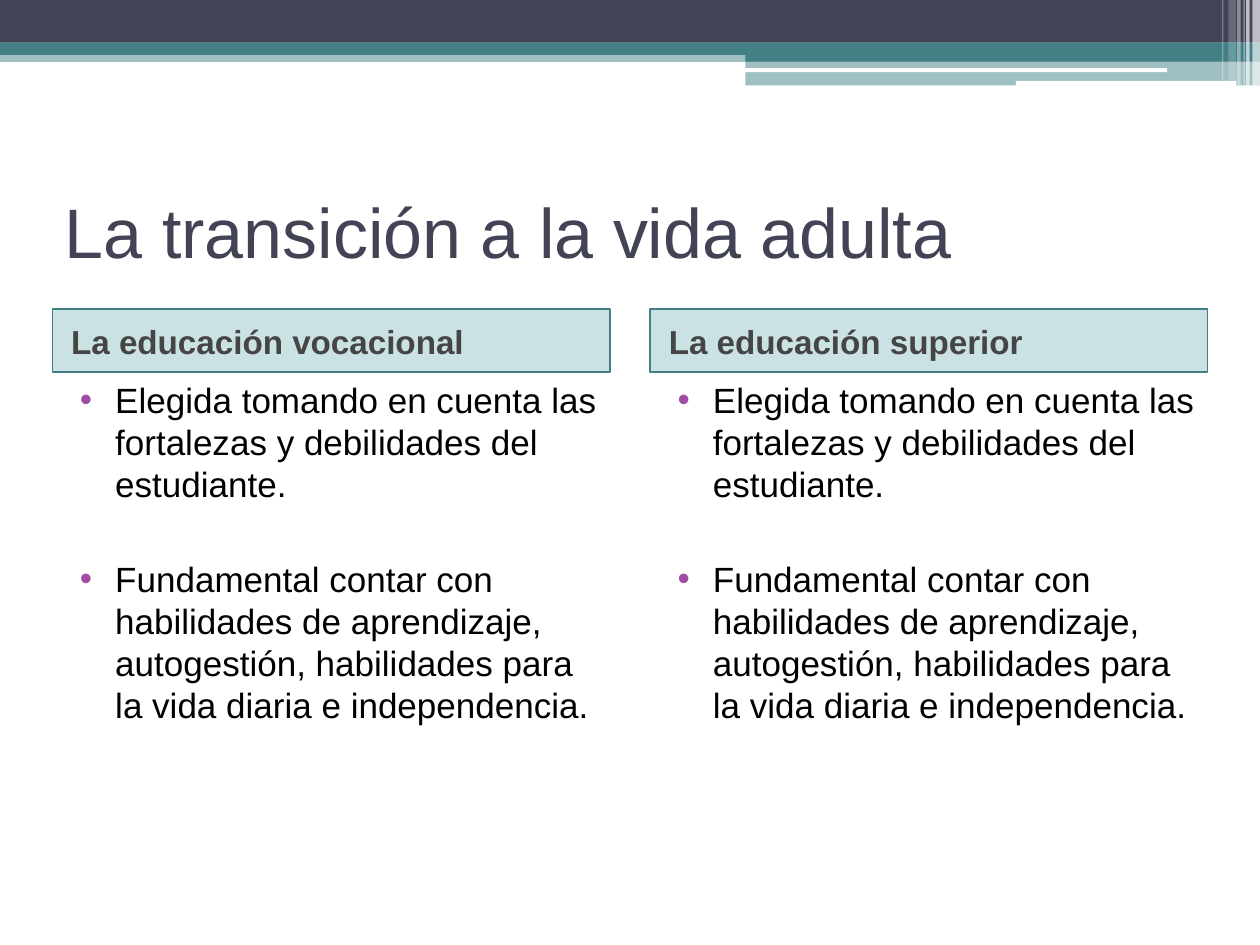
from lxml.etree import SubElement
from pptx import Presentation
from pptx.dml.color import RGBColor
from pptx.enum.shapes import MSO_SHAPE
from pptx.enum.text import MSO_ANCHOR, PP_ALIGN
from pptx.oxml.ns import qn
from pptx.util import Pt

NAVY, TEAL, WHITE = "424456", "438086", "FFFFFF"


def add_block(left, top, width, height, color, opacity=100, kind=MSO_SHAPE.RECTANGLE):
    """Add a filled shape without outline; opacity is in percent."""
    shape = slide.shapes.add_shape(kind, Pt(left), Pt(top), Pt(width), Pt(height))
    shape.shadow.inherit = False
    shape.line.fill.background()
    shape.fill.solid()
    shape.fill.fore_color.rgb = RGBColor.from_string(color)
    if opacity < 100:
        color_element = shape.fill._xPr.find(qn("a:solidFill"))[0]
        SubElement(color_element, qn("a:alpha"), val=str(opacity * 1000))
    return shape


def format_paragraph(paragraph, size, color, bold=False):
    paragraph.alignment = PP_ALIGN.LEFT
    for run in paragraph.runs:
        run.font.name = "Arial"
        run.font.size = Pt(size)
        run.font.bold = bold
        run.font.color.rgb = RGBColor.from_string(color)


presentation = Presentation()
presentation.slide_width, presentation.slide_height = Pt(720), Pt(540)
slide = presentation.slides.add_slide(presentation.slide_layouts[6])

# Header bands
for left, top, width, height, color, opacity in [
    (0, 28.8, 720, 6.6, TEAL, 50),
    (0, 0, 720, 24.4, NAVY, 100),
    (0, 24.2, 720, 7.2, TEAL, 100),
    (426, 28, 294, 7.2, TEAL, 100),
    (426, 35.2, 294, 13.6, TEAL, 50),
]:
    add_block(left, top, width, height, color, opacity)

for left, top, width, height in [(425.5, 39, 241.5, 2.2), (580.5, 46.2, 126, 2.8)]:
    strip = add_block(left, top, width, height, WHITE, kind=MSO_SHAPE.ROUNDED_RECTANGLE)
    strip.adjustments[0] = 0.17

# Translucent vertical stripes at the right edge
for left, width, height, opacity in [
    (715.7, 4.3, 49, 65),
    (712.1, 2, 49, 65),
    (710.6, 0.7, 49, 60),
    (707, 2, 49, 40),
    (702, 4.3, 46.1, 20),
    (698.4, 0.7, 46.1, 30),
]:
    add_block(left, 0, width, height, WHITE, opacity)

title = slide.shapes.add_textbox(Pt(30), Pt(90), Pt(660), Pt(84))
title.text_frame.word_wrap = True
title.text_frame.vertical_anchor = MSO_ANCHOR.MIDDLE
title.text_frame.text = "La transición a la vida adulta"
format_paragraph(title.text_frame.paragraphs[0], 40, NAVY)

# Two columns, each with a heading and the same bullets
bullets = [
    "Elegida tomando en cuenta las fortalezas y debilidades del estudiante.",
    "Fundamental contar con habilidades de aprendizaje, autogestión, "
    "habilidades para la vida diaria e independencia.",
]
column_width = 318.5
for left, heading_text in [
    (30, "La educación vocacional"),
    (371.5, "La educación superior"),
]:
    heading = add_block(left, 176.8, column_width, 36, "328E97", 25)
    heading.line.color.rgb = RGBColor.from_string(TEAL)
    heading.line.width = Pt(1)
    heading.text_frame.word_wrap = True
    heading.text_frame.vertical_anchor = MSO_ANCHOR.MIDDLE
    heading.text_frame.text = heading_text
    paragraph = heading.text_frame.paragraphs[0]
    paragraph.space_before = Pt(3)
    paragraph._p.get_or_add_pPr().set("marL", str(Pt(3.6)))
    format_paragraph(paragraph, 19, "454545", bold=True)

    body = slide.shapes.add_textbox(Pt(left), Pt(212.8), Pt(column_width), Pt(306))
    body.text_frame.word_wrap = True
    body.text_frame.text = "\n".join(bullets)
    for paragraph, space_before in zip(body.text_frame.paragraphs, (3, 30)):
        paragraph.space_before = Pt(space_before)
        paragraph.line_spacing = Pt(24)
        format_paragraph(paragraph, 20, "000000")
        properties = paragraph._p.get_or_add_pPr()
        properties.set("marL", str(Pt(28.8)))
        properties.set("indent", str(Pt(-20.2)))
        bullet_color = SubElement(properties, qn("a:buClr"))
        SubElement(bullet_color, qn("a:srgbClr"), val="A04DA3")
        SubElement(properties, qn("a:buFont"), typeface="Arial")
        SubElement(properties, qn("a:buChar"), char="•")

presentation.save("out.pptx")
